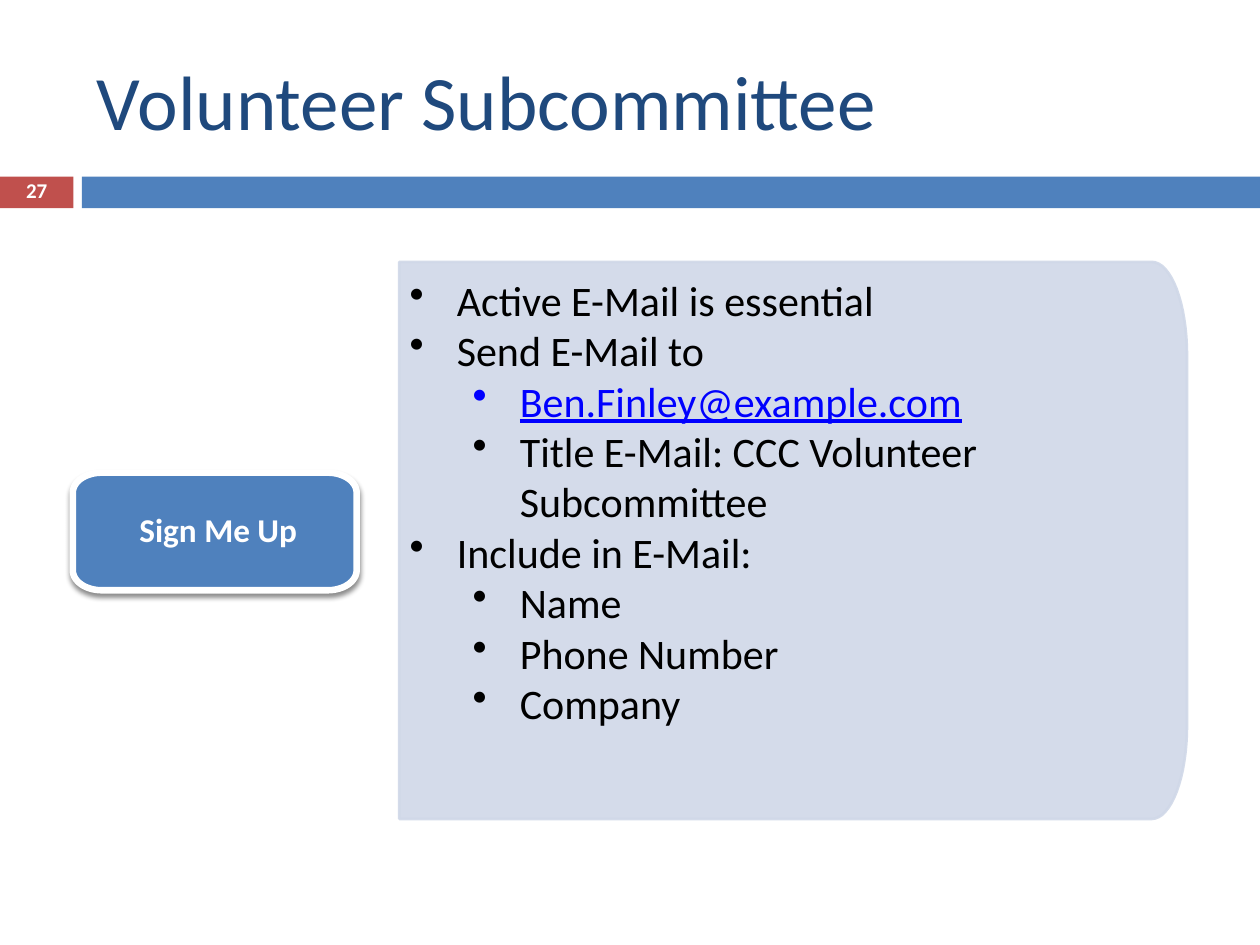
from dataclasses import dataclass
from math import cos, pi, sin

from lxml.etree import SubElement
from pptx import Presentation
from pptx.dml.color import RGBColor
from pptx.enum.shapes import MSO_SHAPE
from pptx.enum.text import MSO_ANCHOR, PP_ALIGN
from pptx.oxml.ns import qn
from pptx.util import Cm, Pt


@dataclass(frozen=True)
class Theme:
    font: str = "Calibri"
    title: str = "1F497D"
    blue: str = "4F81BD"
    red: str = "C0504D"
    panel: str = "D0D8E8"
    white: str = "FFFFFF"
    black: str = "000000"
    link: str = "0000FF"
    title_size: float = 44
    body_size: float = 24
    button_size: float = 19
    number_size: float = 12


def write(para, text, *, font, size, color, bold=False, underline=False,
          align=PP_ALIGN.LEFT, spacing=None):
    para.alignment = align
    para.line_spacing = spacing
    span = para.add_run()
    span.text = text
    span.font.name = font
    span.font.size = Pt(size)
    span.font.bold = bold
    span.font.underline = underline
    span.font.color.rgb = RGBColor.from_string(color)


def add_bullet(para, level):
    """Give the paragraph a hanging bullet at the indent of its level."""
    para.level = level
    properties = para._p.get_or_add_pPr()
    properties.set("marL", str(Cm(0.95 + 1.27 * level)))
    properties.set("indent", str(-Cm(0.95)))
    SubElement(properties, qn("a:buChar"), char="•")


def rounded_outline(left, top, width, height, radius_x, radius_y, corners, steps=16):
    """Points in cm of a box whose listed corners are quarter ellipses.

    Corners run clockwise: 0 bottom right, 1 bottom left, 2 top left, 3 top right.
    """
    points = []
    for corner in range(4):
        sign_x = 1 if corner in (0, 3) else -1
        sign_y = 1 if corner in (0, 1) else -1
        edge_x = left + (width if sign_x > 0 else 0)
        edge_y = top + (height if sign_y > 0 else 0)
        if corner not in corners:
            points.append((edge_x, edge_y))
            continue
        for step in range(steps + 1):
            angle = (corner + step / steps) * pi / 2
            points.append((edge_x + radius_x * (cos(angle) - sign_x),
                           edge_y + radius_y * (sin(angle) - sign_y)))
    return points


class SlideBuilder:
    def __init__(self, page, theme):
        self.page = page
        self.theme = theme

    def title(self, text, left, top, width, height):
        box = self.page.shapes.title
        box.left, box.top, box.width, box.height = map(Cm, (left, top, width, height))
        box.text_frame.vertical_anchor = MSO_ANCHOR.MIDDLE
        write(box.text_frame.paragraphs[0], text, font=self.theme.font,
              size=self.theme.title_size, color=self.theme.title)

    def bar(self, left, top, width, height, color):
        bar = self.page.shapes.add_shape(
            MSO_SHAPE.RECTANGLE, *map(Cm, (left, top, width, height)))
        bar.shadow.inherit = False
        bar.fill.solid()
        bar.fill.fore_color.rgb = RGBColor.from_string(color)
        bar.line.fill.background()

    def page_number(self, text, left, top, width, height):
        box = self.page.shapes.add_textbox(*map(Cm, (left, top, width, height)))
        frame = box.text_frame
        frame.word_wrap = True
        frame.vertical_anchor = MSO_ANCHOR.MIDDLE
        write(frame.paragraphs[0], text, font=self.theme.font,
              size=self.theme.number_size, color=self.theme.white, bold=True,
              align=PP_ALIGN.CENTER, spacing=0.8)

    def outlined(self, points, fill, line, line_width, insets, anchor):
        """Add a freeform through the points and prepare its text frame."""
        start, *rest = [(Cm(x), Cm(y)) for x, y in points]
        builder = self.page.shapes.build_freeform(*start)
        builder.add_line_segments(rest, close=True)
        shape = builder.convert_to_shape()
        shape.shadow.inherit = False
        shape.fill.solid()
        shape.fill.fore_color.rgb = RGBColor.from_string(fill)
        shape.line.color.rgb = RGBColor.from_string(line)
        shape.line.width = Pt(line_width)
        frame = shape.text_frame
        frame.word_wrap = True
        frame.vertical_anchor = anchor
        (frame.margin_left, frame.margin_top,
         frame.margin_right, frame.margin_bottom) = map(Cm, insets)
        return shape

    def panel(self, items, *bounds):
        """Items are (level, text, colour, underline)."""
        points = rounded_outline(*bounds, radius_x=0.71, radius_y=1.88, corners=(0, 3))
        shape = self.outlined(points, self.theme.panel, self.theme.panel, 1.5,
                              (0.21, 0.25, 0.36, 0.25), MSO_ANCHOR.TOP)
        for color in shape._element.spPr.iter(qn("a:srgbClr")):
            SubElement(color, qn("a:alpha"), val="90000")
        frame = shape.text_frame
        for index, (level, text, color, underline) in enumerate(items):
            para = frame.add_paragraph() if index else frame.paragraphs[0]
            write(para, text, font=self.theme.font, size=self.theme.body_size,
                  color=color, underline=underline)
            add_bullet(para, level)

    def button(self, text, *bounds):
        points = rounded_outline(*bounds, radius_x=0.58, radius_y=0.4, corners=range(4))
        shape = self.outlined(points, self.theme.blue, self.theme.white, 3.75,
                              (0.52, 0.28, 0.38, 0.28), MSO_ANCHOR.MIDDLE)
        effects = shape._element.spPr.find(qn("a:effectLst"))
        shadow = SubElement(effects, qn("a:outerShdw"), blurRad=str(Pt(3)),
                            dist=str(Pt(2.4)), dir="5400000", rotWithShape="0")
        color = SubElement(shadow, qn("a:srgbClr"), val=self.theme.black)
        SubElement(color, qn("a:alpha"), val="45000")
        write(shape.text_frame.paragraphs[0], text, font=self.theme.font,
              size=self.theme.button_size, color=self.theme.white, bold=True,
              align=PP_ALIGN.CENTER, spacing=0.9)


def main():
    theme = Theme()
    deck = Presentation()
    deck.slide_width, deck.slide_height = Cm(25.4), Cm(19.05)
    page = deck.slides.add_slide(deck.slide_layouts[5])
    slide = SlideBuilder(page, theme)

    slide.bar(0, 3.56, 1.48, 0.64, theme.red)
    slide.bar(1.65, 3.56, 23.75, 0.64, theme.blue)
    slide.title("Volunteer Subcommittee", 1.7, 0.64, 22.66, 2.74)
    slide.page_number("27", 0, 3.53, 1.48, 0.69)
    slide.panel([
        (0, "Active E-Mail is essential", theme.black, False),
        (0, "Send E-Mail to", theme.black, False),
        (1, "Ben.Finley@example.com", theme.link, True),
        (1, "Title E-Mail: CCC Volunteer Subcommittee", theme.black, False),
        (0, "Include in E-Mail:", theme.black, False),
        (1, "Name", theme.black, False),
        (1, "Phone Number", theme.black, False),
        (1, "Company", theme.black, False),
    ], 8.05, 5.28, 15.88, 11.23)
    slide.button("Sign Me Up", 1.47, 9.53, 5.72, 2.37)

    deck.save("out.pptx")


if __name__ == "__main__":
    main()
